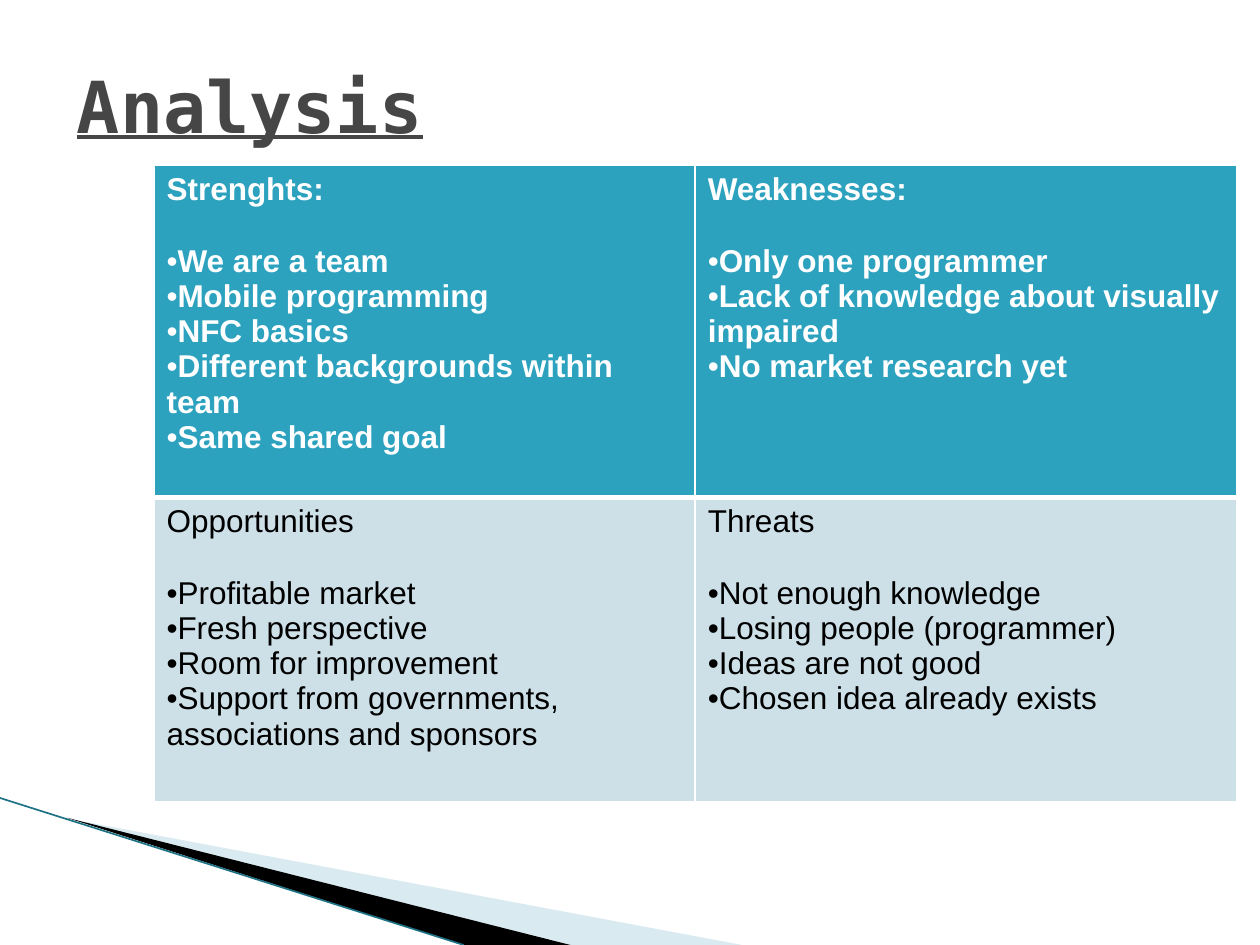
import pptx
import pptx.dml.color
import pptx.enum.shapes
import pptx.enum.text
import pptx.oxml.ns
import pptx.util
from lxml import etree

Pt = pptx.util.Pt
RGB = pptx.dml.color.RGBColor.from_string
qn = pptx.oxml.ns.qn

THEME = {
    "title": {"name": "DejaVu Sans Mono", "size": Pt(41), "bold": True, "underline": True},
    "title_color": "464646",
    "body": {"name": "Arial", "size": Pt(18)},
    "rows": [
        {"fill": "2DA2BF", "color": "FFFFFF", "bold": True},
        {"fill": "CDE0E8", "color": "000000", "bold": False},
    ],
    "border": "FFFFFF",
    "pale": "A0CBDC",
    "dark": "000000",
    "edge": "1F7285",
}

SWOT = [
    [
        ("Strenghts:", ["We are a team", "Mobile programming", "NFC basics",
                        "Different backgrounds within team", "Same shared goal"]),
        ("Weaknesses:", ["Only one programmer",
                         "Lack of knowledge about visually impaired",
                         "No market research yet"]),
    ],
    [
        ("Opportunities", ["Profitable market", "Fresh perspective", "Room for improvement",
                           "Support from governments, associations and sponsors"]),
        ("Threats", ["Not enough knowledge", "Losing people (programmer)",
                     "Ideas are not good", "Chosen idea already exists"]),
    ],
]


def style_font(font, formats, color):
    for key, value in formats.items():
        setattr(font, key, value)
    font.color.rgb = RGB(color)


def add_borders(cell, widths):
    """Add solid cell borders; widths maps an edge letter to points."""
    tcPr = cell._tc.get_or_add_tcPr()
    for i, (edge, width) in enumerate(widths.items()):
        ln = etree.Element(qn(f"a:ln{edge}"), w=str(Pt(width)))
        fill = etree.SubElement(ln, qn("a:solidFill"))
        etree.SubElement(fill, qn("a:srgbClr"), val=THEME["border"])
        tcPr.insert(i, ln)


prs = pptx.Presentation()
prs.slide_width, prs.slide_height = Pt(720), Pt(540)
s = prs.slides.add_slide(prs.slide_layouts[5])

# Corner wedges
wedges = [
    ("pale", 40, [(39.6, 468), (424, 540), (326, 540)]),
    ("dark", 100, [(38.2, 467.3), (326, 540), (265, 540)]),
]
for name, opacity, points in wedges:
    points = [(Pt(x), Pt(y)) for x, y in points]
    fb = s.shapes.build_freeform(*points[0], scale=1.0)
    fb.add_line_segments(points[1:], close=True)
    sp = fb.convert_to_shape()
    sp.shadow.inherit = False
    sp.line.fill.background()
    sp.fill.solid()
    sp.fill.fore_color.rgb = RGB(THEME[name])
    if opacity < 100:
        clr = sp.fill._xPr.find(qn("a:solidFill"))[0]
        etree.SubElement(clr, qn("a:alpha"), val=str(opacity * 1000))

edge = s.shapes.add_connector(pptx.enum.shapes.MSO_CONNECTOR.STRAIGHT,
                              Pt(0), Pt(456), Pt(265), Pt(540))
edge.line.color.rgb = RGB(THEME["edge"])
edge.line.width = Pt(0.95)
etree.SubElement(edge._element.spPr, qn("a:effectLst"))

# Table
table = s.shapes.add_table(2, 2, Pt(88), Pt(94.6), Pt(618.6), Pt(364)).table
table.first_row = table.horz_banding = False
for row, height in zip(table.rows, (189.7, 174)):
    row.height = Pt(height)
for column in table.columns:
    column.width = Pt(309.3)

for i, (look, quadrants) in enumerate(zip(THEME["rows"], SWOT)):
    for j, (heading, points) in enumerate(quadrants):
        cell = table.cell(i, j)
        cell.fill.solid()
        cell.fill.fore_color.rgb = RGB(look["fill"])
        add_borders(cell, {"L": 1, "R": 1, "T": 3 if i else 1, "B": 1 if i else 3})
        tf = cell.text_frame
        for n, text in enumerate([heading, *points]):
            p = tf.add_paragraph() if n else tf.paragraphs[0]
            if n:
                pPr = p._p.get_or_add_pPr()
                pPr.set("marL", "0")
                pPr.set("indent", "0")
                etree.SubElement(pPr, qn("a:buFont"), typeface=THEME["body"]["name"])
                etree.SubElement(pPr, qn("a:buChar"), char="•")
            if n == 1:
                p.space_before = Pt(20.8)
            r = p.add_run()
            r.text = text
            style_font(r.font, THEME["body"] | {"bold": look["bold"]}, look["color"])

# Title
title = s.shapes.title
box = {"left": 36.7, "top": 15, "width": 648, "height": 90}
for key, value in box.items():
    setattr(title, key, Pt(value))
tf = title.text_frame
tf.vertical_anchor = pptx.enum.text.MSO_ANCHOR.MIDDLE
p = tf.paragraphs[0]
p.alignment = pptx.enum.text.PP_ALIGN.LEFT
r = p.add_run()
r.text = "Analysis"
style_font(r.font, THEME["title"], THEME["title_color"])

prs.save("out.pptx")
